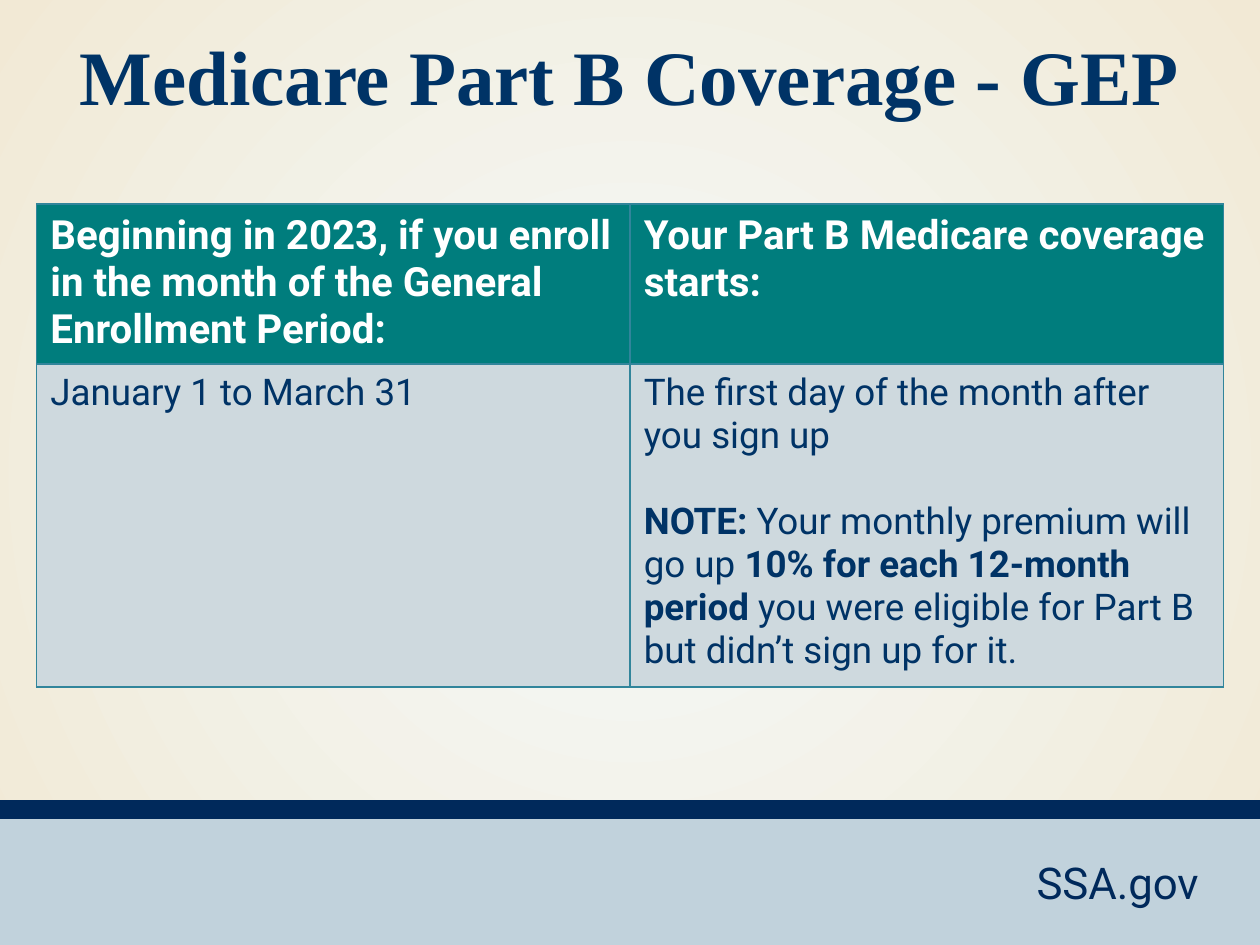
from dataclasses import dataclass

from lxml import etree
from pptx import Presentation
from pptx.dml.color import RGBColor
from pptx.enum.shapes import MSO_SHAPE
from pptx.enum.text import MSO_ANCHOR, PP_ALIGN
from pptx.oxml.ns import qn
from pptx.util import Inches, Pt

RECTANGLE = MSO_SHAPE.RECTANGLE
CENTER = PP_ALIGN.CENTER
TOP, BOTTOM = MSO_ANCHOR.TOP, MSO_ANCHOR.BOTTOM
TITLE_ONLY = 5


@dataclass(frozen=True)
class Theme:
    glow: str = "F3FAFB"
    cream: str = "F2E9D5"
    footer: str = "C1D2DC"
    navy: str = "00295B"
    text: str = "003366"
    white: str = "FFFFFF"
    header: str = "007D7D"
    body: str = "CED9DE"
    border: str = "31859B"
    title_font: str = "Times New Roman"
    body_font: str = "Roboto"
    title_size: float = 44
    footer_size: float = 25
    header_size: float = 23
    body_size: float = 21
    note_gap: float = 24.6


@dataclass(frozen=True)
class Band:
    top: float
    height: float
    color: str


@dataclass(frozen=True)
class Run:
    text: str
    bold: bool = False


@dataclass(frozen=True)
class RowStyle:
    height: float
    fill: str
    color: str
    size: float


THEME = Theme()
BANDS = [Band(6.45, 1.06, THEME.footer), Band(6.35, 0.15, THEME.navy)]
ROW_STYLES = [
    RowStyle(1.24, THEME.header, THEME.white, THEME.header_size),
    RowStyle(2.5, THEME.body, THEME.text, THEME.body_size),
]
# Rows of cells, each cell a list of paragraphs made of runs
ROWS = [
    [
        [[Run("Beginning in 2023, if you enroll in the month of the General Enrollment Period:", True)]],
        [[Run("Your Part B Medicare coverage starts:", True)]],
    ],
    [
        [[Run("January 1 to March 31")]],
        [
            [Run("The first day of the month after you sign up")],
            [
                Run("NOTE: ", True),
                Run("Your monthly premium will go up "),
                Run("10% for each 12-month period ", True),
                Run("you were eligible for Part B but didn’t sign up for it."),
            ],
        ],
    ],
]
COLUMN_WIDTH = 4.71


def apply(target, values: dict) -> None:
    for name, value in values.items():
        setattr(target, name, value)


def add_run(paragraph, content: Run, font: str, size: float, color: str) -> None:
    run = paragraph.add_run()
    run.text = content.text
    apply(run.font, {"name": font, "size": Pt(size), "bold": content.bold})
    run.font.color.rgb = RGBColor.from_string(color)


def paint_background(slide) -> None:
    fill = slide.background.fill
    fill.gradient()
    for stop, color in zip(fill.gradient_stops, (THEME.glow, THEME.cream)):
        stop.color.rgb = RGBColor.from_string(color)
    # Radial gradient spreading from the slide centre
    gradient = slide.element.find(".//" + qn("a:gradFill"))
    linear = gradient.find(qn("a:lin"))
    radial = etree.Element(qn("a:path"), {"path": "circle"})
    sides = dict.fromkeys("ltrb", "50000")
    etree.SubElement(radial, qn("a:fillToRect"), sides)
    gradient.replace(linear, radial)


def add_band(slide, band: Band) -> None:
    shape = slide.shapes.add_shape(
        RECTANGLE, 0, Inches(band.top), Inches(10), Inches(band.height))
    shape.shadow.inherit = False
    shape.fill.solid()
    shape.fill.fore_color.rgb = RGBColor.from_string(band.color)
    shape.line.fill.background()


def set_borders(cell) -> None:
    properties = cell._tc.get_or_add_tcPr()
    for index, side in enumerate(("lnL", "lnR", "lnT", "lnB")):
        line = etree.Element(qn(f"a:{side}"), {"w": str(Pt(1))})
        solid = etree.SubElement(line, qn("a:solidFill"))
        etree.SubElement(solid, qn("a:srgbClr"), {"val": THEME.border})
        properties.insert(index, line)


def fill_cell(cell, paragraphs: list[list[Run]], style: RowStyle) -> None:
    cell.fill.solid()
    cell.fill.fore_color.rgb = RGBColor.from_string(style.fill)
    apply(cell, {
        "margin_left": Inches(0.11), "margin_right": Inches(0.11),
        "margin_top": Inches(0.06), "margin_bottom": Inches(0.06),
        "vertical_anchor": TOP,
    })
    set_borders(cell)
    for index, runs in enumerate(paragraphs):
        if index:
            paragraph = cell.text_frame.add_paragraph()
            paragraph.space_before = Pt(THEME.note_gap)
        else:
            paragraph = cell.text_frame.paragraphs[0]
        for run in runs:
            add_run(paragraph, run, THEME.body_font, style.size, style.color)


def add_coverage_table(slide) -> None:
    height = sum(style.height for style in ROW_STYLES)
    table = slide.shapes.add_table(
        len(ROWS), len(ROWS[0]), Inches(0.29), Inches(1.62),
        Inches(COLUMN_WIDTH * len(ROWS[0])), Inches(height)).table
    for column in table.columns:
        column.width = Inches(COLUMN_WIDTH)
    for row, cells, style in zip(table.rows, ROWS, ROW_STYLES):
        row.height = Inches(style.height)
        for cell, paragraphs in zip(row.cells, cells):
            fill_cell(cell, paragraphs, style)


def main() -> None:
    presentation = Presentation()
    apply(presentation, {"slide_width": Inches(10), "slide_height": Inches(7.5)})
    slide = presentation.slides.add_slide(presentation.slide_layouts[TITLE_ONLY])
    paint_background(slide)

    # Footer
    for band in BANDS:
        add_band(slide, band)
    site = slide.shapes.add_textbox(
        Inches(7.84), Inches(6.74), Inches(2.06), Inches(0.52))
    site.text_frame.word_wrap = True
    paragraph = site.text_frame.paragraphs[0]
    paragraph.alignment = CENTER
    add_run(paragraph, Run("SSA.gov"), THEME.body_font, THEME.footer_size, THEME.navy)

    # Title
    title = slide.shapes.title
    apply(title, {"left": 0, "top": Inches(0.17),
                  "width": Inches(10), "height": Inches(0.83)})
    apply(title.text_frame, {"vertical_anchor": BOTTOM, "margin_bottom": Inches(0.04)})
    paragraph = title.text_frame.paragraphs[0]
    paragraph.alignment = CENTER
    add_run(paragraph, Run("Medicare Part B Coverage - GEP", True),
            THEME.title_font, THEME.title_size, THEME.text)

    add_coverage_table(slide)
    presentation.save("out.pptx")


if __name__ == "__main__":
    main()
